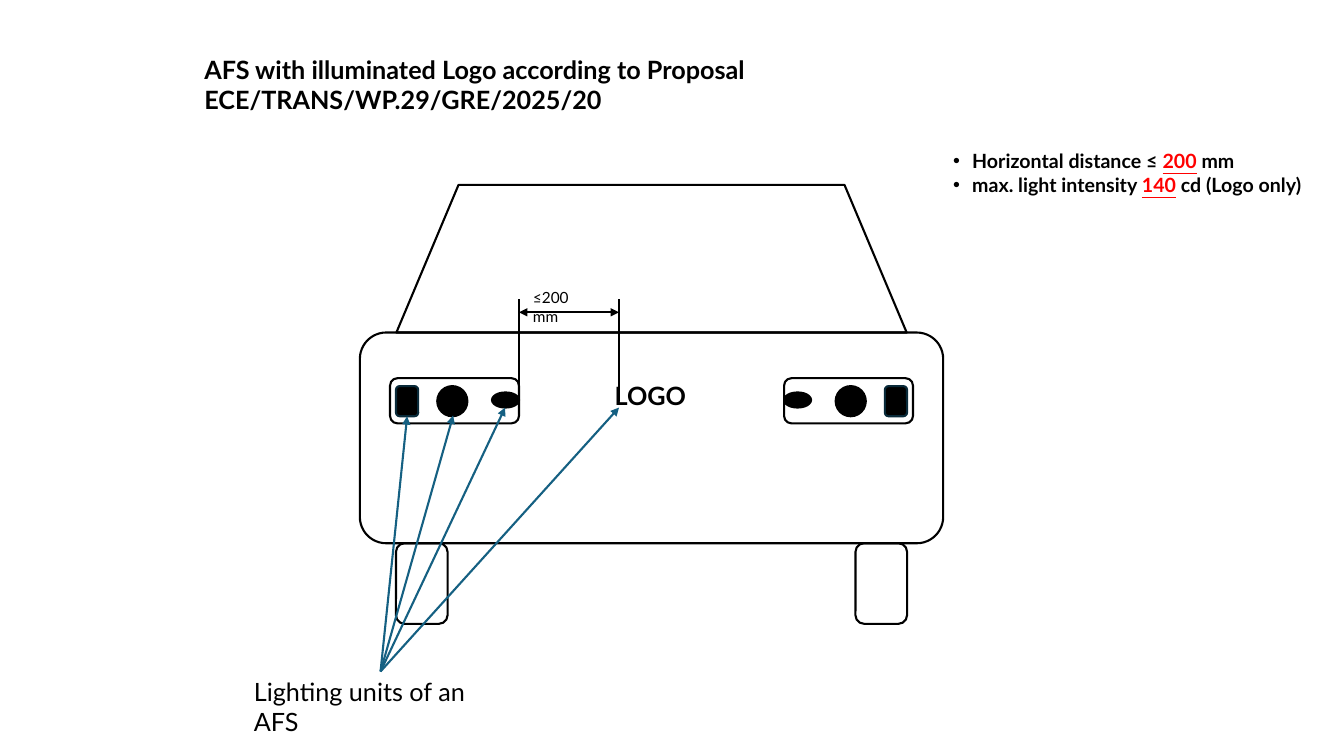
from lxml import etree
from pptx import Presentation
from pptx import util as u
from pptx.dml import color
from pptx.enum import shapes, text
from pptx.oxml import ns

BLACK, BLUE, NAVY, RED = "000000", "156082", "092A39", "FF0000"
KIND = shapes.MSO_SHAPE


def rgb(code):
    return color.RGBColor.from_string(code)


def node(host, tag, **attrs):
    return etree.SubElement(host, ns.qn(tag), **attrs)


class Pen:
    def __init__(self, slide):
        self.slide = slide
        self.font = {"name": "Lato", "size": u.Pt(18), "bold": False}
        self.width = u.Pt(1.5)

    def stroke(self, line, ink):
        line.color.rgb = rgb(ink)
        line.width = self.width

    def shape(self, kind, box, fill=None, ink=BLACK, bend=None):
        item = self.slide.shapes.add_shape(kind, *map(u.Cm, box))
        item.shadow.inherit = False
        if fill:
            item.fill.solid()
            item.fill.fore_color.rgb = rgb(fill)
        else:
            item.fill.background()
        if bend:
            item.adjustments[0] = bend
        self.stroke(item.line, ink)
        return item

    def pair(self, kind, box, axis, **style):
        left, top, wide, high = box
        twin = (2 * axis - left - wide, top, wide, high)
        return [self.shape(kind, spot, **style) for spot in (box, twin)][0]

    def line(self, start, end, ink=BLACK, tips=(), begin=None, stop=None):
        ends = map(u.Cm, start + end)
        item = self.slide.shapes.add_connector(shapes.MSO_CONNECTOR.STRAIGHT, *ends)
        self.stroke(item.line, ink)
        for tip in tips:
            node(item.line._get_or_add_ln(), tip, type="triangle")
        node(item._element.spPr, "a:effectLst")
        if begin:
            item.begin_connect(*begin)
        if stop:
            item.end_connect(*stop)

    def label(self, box, rows, bullet=False, **style):
        item = self.slide.shapes.add_textbox(*map(u.Cm, box))
        frame = item.text_frame
        frame.word_wrap = True
        frame.auto_size = text.MSO_AUTO_SIZE.SHAPE_TO_FIT_TEXT
        for place, row in enumerate(rows):
            para = frame.add_paragraph() if place else frame.paragraphs[0]
            if bullet:
                props = para._p.get_or_add_pPr()
                dent = u.Cm(0.48)
                props.set("marL", str(dent))
                props.set("indent", str(-dent))
                node(props, "a:buFont", typeface="Arial")
                node(props, "a:buChar", char="•")
            for words, mark in row:
                run = para.add_run()
                run.text = words
                look = {**self.font, **style, "underline": mark}
                for key, value in look.items():
                    setattr(run.font, key, value)
                run.font.color.rgb = rgb(RED if mark else BLACK)
        return item


def main():
    deck = Presentation()
    deck.slide_width, deck.slide_height = u.Cm(33.87), u.Cm(19.05)
    pen = Pen(deck.slides.add_slide(deck.slide_layouts[6]))
    axis = 16.42

    pen.pair(KIND.ROUNDED_RECTANGLE, (9.98, 13.69, 1.3, 2.03), axis)
    pen.shape(KIND.ROUNDED_RECTANGLE, (9.07, 8.38, 14.7, 5.31), bend=0.125)
    pen.shape(KIND.TRAPEZOID, (9.99, 4.66, 12.86, 3.72), bend=0.421)
    lamp = pen.pair(KIND.ROUNDED_RECTANGLE, (9.83, 9.53, 3.25, 1.14), axis)

    edge, logo, top, mid = 13.08, 15.6, 7.54, 10.1
    pen.line((edge, mid), (edge, top), begin=(lamp, 3))
    pen.line((logo, mid), (logo, top))
    pen.line((edge, 7.87), (logo, 7.87), tips=("a:headEnd", "a:tailEnd"))
    pen.label((13.18, 7.14, 2.11, 0.74), [[("≤200 mm", False)]], size=u.Pt(11))

    pen.pair(KIND.OVAL, (12.4, 9.89, 0.68, 0.38), axis, fill=BLACK)
    pen.pair(KIND.OVAL, (11.02, 9.73, 0.76, 0.76), axis, fill=BLACK)
    block = pen.pair(KIND.ROUNDED_RECTANGLE, (9.98, 9.73, 0.56, 0.76), axis,
                     fill=BLACK, ink=NAVY)

    pen.label((15.24, 9.47, 2.31, 1.02), [[("LOGO", False)]], bold=True)
    units = pen.label((6.15, 16.92, 6.88, 1.02),
                      [[("Lighting units of an AFS", False)]])
    goals = [((10.26, 10.49), (block, 2)), ((11.42, 10.47), None),
             ((12.73, 10.27), None), ((logo, 10.27), None)]
    for goal, stop in goals:
        pen.line((9.59, 16.92), goal, ink=BLUE, tips=("a:tailEnd",),
                 begin=(units, 0), stop=stop)

    limits = [
        [("Horizontal distance ≤ ", False), ("200", True), (" mm", False)],
        [("max. light intensity ", False), ("140", True), (" cd (Logo only)", False)],
    ]
    pen.label((23.77, 3.63, 9.6, 1.45), limits, bullet=True, size=u.Pt(14), bold=True)
    title = "AFS with illuminated Logo according to Proposal ECE/TRANS/WP.29/GRE/2025/20"
    pen.label((4.9, 1.24, 24.08, 1.02), [[(title, False)]], bold=True)

    deck.save("out.pptx")


if __name__ == "__main__":
    main()
